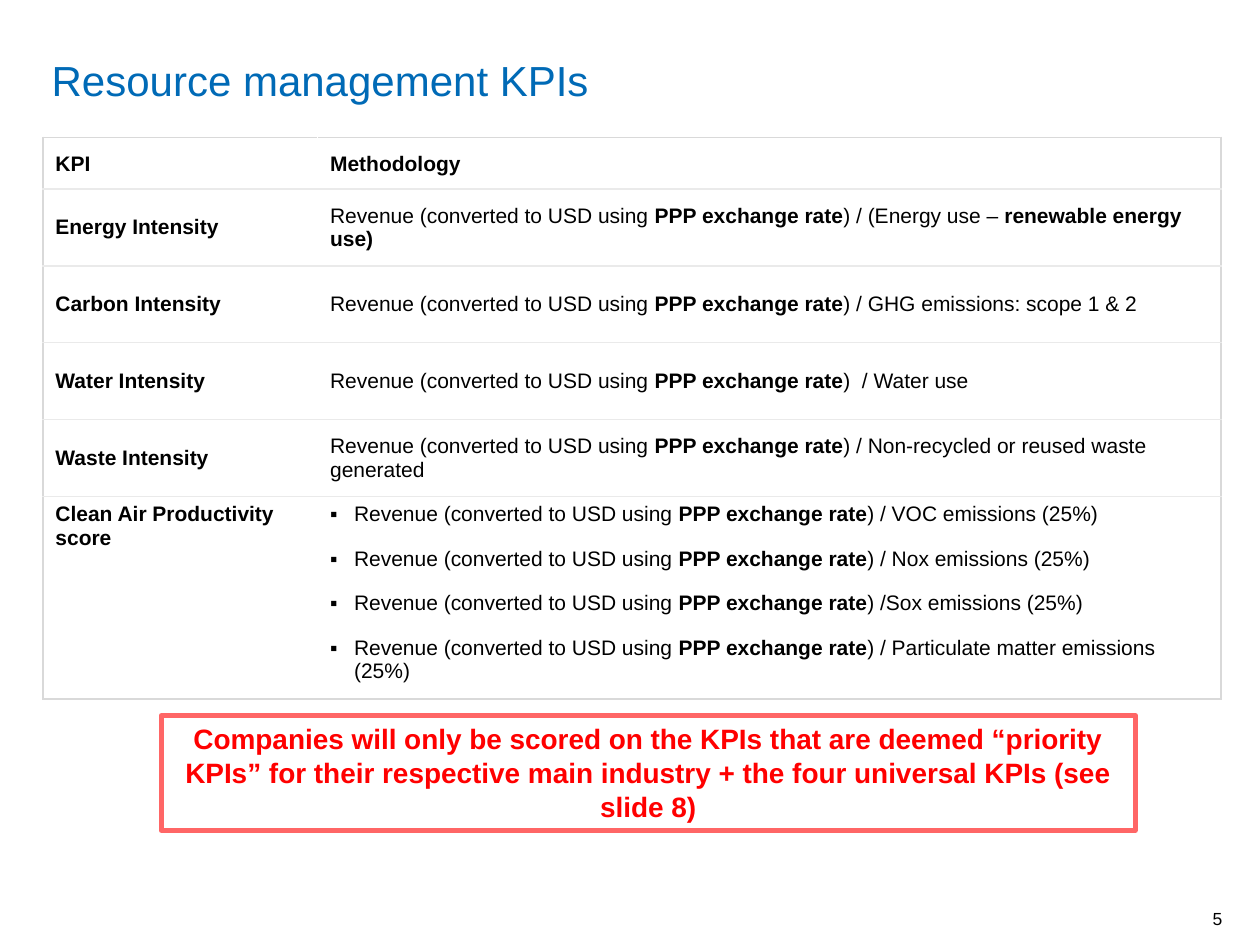
from lxml import etree
from pptx import Presentation
from pptx.dml.color import RGBColor
from pptx.enum.shapes import MSO_SHAPE
from pptx.enum.text import MSO_ANCHOR, PP_ALIGN
from pptx.oxml.ns import qn
from pptx.util import Inches, Pt

RECTANGLE = MSO_SHAPE.RECTANGLE
TOP, MIDDLE, BOTTOM = MSO_ANCHOR.TOP, MSO_ANCHOR.MIDDLE, MSO_ANCHOR.BOTTOM
LEFT, CENTER, RIGHT = PP_ALIGN.LEFT, PP_ALIGN.CENTER, PP_ALIGN.RIGHT
TITLE_ONLY = 5

FONT = "Arial"
BLACK, BLUE, RED, CORAL = "000000", "006AB6", "FF0000", "FF6666"
OUTER_LINE, INNER_LINE = "D9D9D9", "EAEAEA"

COLUMN_WIDTHS = (2.18, 7.17)
HEADER_HEIGHT, KPI_HEIGHT, SCORE_HEIGHT = 0.41, 0.61, 1.61

INTENSITIES = (
    ("Energy Intensity", ") / (Energy use – ", "renewable energy use)"),
    ("Carbon Intensity", ") / GHG emissions: scope 1 & 2", ""),
    ("Water Intensity", ")  / Water use", ""),
    ("Waste Intensity", ") / Non-recycled or reused waste generated", ""),
)
CLEAN_AIR_PARTS = (
    ") / VOC emissions (25%)",
    ") / Nox emissions (25%)",
    ") /Sox emissions (25%)",
    ") / Particulate matter emissions (25%)",
)


def rgb(color):
    return RGBColor.from_string(color)


def add_run(paragraph, text, size, color=BLACK, bold=False):
    run = paragraph.add_run()
    run.text = text
    run.font.name = FONT
    run.font.size = Pt(size)
    run.font.bold = bold
    run.font.color.rgb = rgb(color)


def add_formula(paragraph, divisor, bold_ending=""):
    """Write revenue over a divisor, with the exchange rate in bold."""
    add_run(paragraph, "Revenue (converted to USD using ", 12)
    add_run(paragraph, "PPP exchange rate", 12, bold=True)
    add_run(paragraph, divisor, 12)
    if bold_ending:
        add_run(paragraph, bold_ending, 12, bold=True)


def add_bullet(paragraph):
    properties = paragraph._p.get_or_add_pPr()
    properties.set("marL", str(Inches(0.19)))
    properties.set("indent", str(Inches(-0.19)))
    etree.SubElement(properties, qn("a:buFont"), typeface=FONT)
    etree.SubElement(properties, qn("a:buChar"), char="▪")


def set_border(cell, side, color):
    line = etree.SubElement(cell._tc.get_or_add_tcPr(), qn(f"a:ln{side}"), w=str(Pt(1)))
    fill = etree.SubElement(line, qn("a:solidFill"))
    etree.SubElement(fill, qn("a:srgbClr"), val=color)


def format_cell(cell, row, column, last_row):
    if column == 0:
        set_border(cell, "L", OUTER_LINE)
    else:
        set_border(cell, "R", OUTER_LINE)
    set_border(cell, "T", OUTER_LINE if row == 0 else INNER_LINE)
    set_border(cell, "B", OUTER_LINE if row == last_row else INNER_LINE)
    cell.fill.background()
    cell.margin_left = cell.margin_right = Inches(0.1)
    cell.margin_top = cell.margin_bottom = Inches(0.05 if row == last_row else 0.1)
    cell.vertical_anchor = {0: BOTTOM, last_row: TOP}.get(row, MIDDLE)


def add_title(slide, text):
    title = slide.shapes.title
    title.left, title.top = Inches(0.31), Inches(0.38)
    title.width, title.height = Inches(8.23), Inches(0.9)
    title.text_frame.vertical_anchor = TOP
    paragraph = title.text_frame.paragraphs[0]
    paragraph.alignment = LEFT
    add_run(paragraph, text, 24, BLUE)


def add_kpi_table(slide):
    heights = (HEADER_HEIGHT, *[KPI_HEIGHT] * len(INTENSITIES), SCORE_HEIGHT)
    last_row = len(heights) - 1
    table = slide.shapes.add_table(
        len(heights), len(COLUMN_WIDTHS), Inches(0.34), Inches(1.09),
        Inches(sum(COLUMN_WIDTHS)), Inches(sum(heights))).table
    table.first_row = table.horz_banding = False
    for column, width in zip(table.columns, COLUMN_WIDTHS):
        column.width = Inches(width)
    for row, height in enumerate(heights):
        table.rows[row].height = Inches(height)
        for column in range(len(COLUMN_WIDTHS)):
            format_cell(table.cell(row, column), row, column, last_row)

    kpis = ("KPI", *[kpi for kpi, _, _ in INTENSITIES], "Clean Air Productivity score")
    for row, kpi in enumerate(kpis):
        add_run(table.cell(row, 0).text_frame.paragraphs[0], kpi, 12, bold=True)
    add_run(table.cell(0, 1).text_frame.paragraphs[0], "Methodology", 12, bold=True)
    for row, (_, divisor, ending) in enumerate(INTENSITIES, start=1):
        add_formula(table.cell(row, 1).text_frame.paragraphs[0], divisor, ending)

    score = table.cell(last_row, 1).text_frame
    for index, divisor in enumerate(CLEAN_AIR_PARTS):
        paragraph = score.add_paragraph() if index else score.paragraphs[0]
        add_bullet(paragraph)
        if index:
            paragraph.space_before = Pt(6)
        paragraph.space_after = Pt(6)
        add_formula(paragraph, divisor)


def add_scoring_note(slide, text):
    note = slide.shapes.add_shape(
        RECTANGLE, Inches(1.28), Inches(5.68), Inches(7.73), Inches(0.91))
    note.shadow.inherit = False
    note.fill.background()
    note.line.color.rgb = rgb(CORAL)
    note.line.width = Pt(3)
    frame = note.text_frame
    frame.word_wrap = True
    frame.vertical_anchor = TOP
    frame.paragraphs[0].alignment = CENTER
    add_run(frame.paragraphs[0], text, 16, RED, bold=True)


def add_page_number(slide, number):
    frame = slide.shapes.add_textbox(
        Inches(8.93), Inches(7.17), Inches(0.77), Inches(0.2)).text_frame
    frame.word_wrap = True
    frame.vertical_anchor = BOTTOM
    frame.margin_left = frame.margin_right = frame.margin_top = frame.margin_bottom = 0
    frame.paragraphs[0].alignment = RIGHT
    add_run(frame.paragraphs[0], number, 10)


def main():
    presentation = Presentation()
    presentation.slide_width, presentation.slide_height = Inches(10), Inches(7.5)
    slide = presentation.slides.add_slide(presentation.slide_layouts[TITLE_ONLY])
    add_title(slide, "Resource management KPIs")
    add_kpi_table(slide)
    add_scoring_note(
        slide, "Companies will only be scored on the KPIs that are deemed “priority KPIs” "
        "for their respective main industry + the four universal KPIs (see slide 8)")
    add_page_number(slide, "5")
    presentation.save("out.pptx")


if __name__ == "__main__":
    main()
